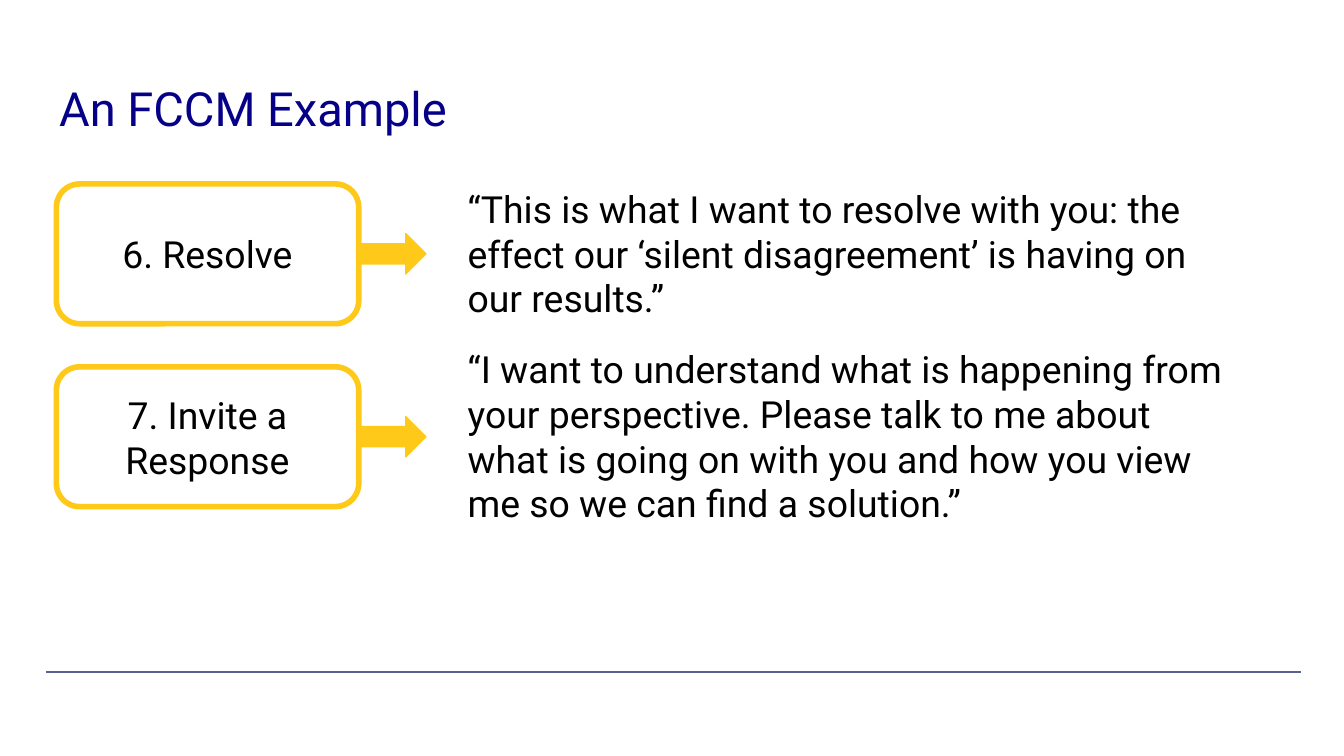
from pptx import Presentation
from pptx.dml.color import RGBColor
from pptx.enum.shapes import MSO_CONNECTOR, MSO_SHAPE
from pptx.enum.text import MSO_ANCHOR, MSO_AUTO_SIZE, PP_ALIGN
from pptx.oxml.ns import qn
from pptx.util import Pt

ROUNDED, ARROW = MSO_SHAPE.ROUNDED_RECTANGLE, MSO_SHAPE.RIGHT_ARROW
STRAIGHT = MSO_CONNECTOR.STRAIGHT
TOP, MIDDLE = MSO_ANCHOR.TOP, MSO_ANCHOR.MIDDLE
LEFT, CENTER = PP_ALIGN.LEFT, PP_ALIGN.CENTER
NO_AUTOFIT = MSO_AUTO_SIZE.NONE
TITLE_ONLY = 5

COLORS = {"title": "050087", "text": "000000", "accent": "FFC919", "rule": "58628C"}
FONT = "Roboto"
INSET = 7.2

STEPS = [
    ("6. Resolve", 87.1,
     "“This is what I want to resolve with you: the effect our ‘silent disagreement’ "
     "is having on our results.”"),
    ("7. Invite a Response", 111.6,
     "“I want to understand what is happening from your perspective. Please talk to me "
     "about what is going on with you and how you view me so we can find a solution.”"),
]
FIRST_CENTER, ROW_PITCH = 136, 98
BOX_LEFT, BOX_WIDTH, BOX_HEIGHT = 30.2, 162, 74.9
ARROW_WIDTH, ARROW_HEIGHT = 36, 21.6
QUOTE_LEFT, QUOTE_WIDTH = 243.4, 421.2


def rgb(name):
    return RGBColor.from_string(COLORS[name])


def write(sp, text, size=20, color="text", align=LEFT, anchor=TOP):
    tf = sp.text_frame
    tf.word_wrap = True
    tf.auto_size = NO_AUTOFIT
    tf.vertical_anchor = anchor
    tf.margin_left = tf.margin_right = tf.margin_top = tf.margin_bottom = Pt(INSET)
    p = tf.paragraphs[0]
    p.alignment = align
    r = p.add_run()
    r.text = text
    r.font.name, r.font.size = FONT, Pt(size)
    r.font.color.rgb = rgb(color)


class SlideBuilder:
    def __init__(self, slide):
        self.slide = slide
        self.shapes = slide.shapes

    def title(self, text, x, y, w, h):
        sp = self.shapes.title
        sp.left, sp.top, sp.width, sp.height = Pt(x), Pt(y), Pt(w), Pt(h)
        write(sp, text, size=25.2, color="title")

    def rule(self, x1, x2, y):
        line = self.shapes.add_connector(STRAIGHT, Pt(x1), Pt(y), Pt(x2), Pt(y))
        line.line.color.rgb = rgb("rule")
        line.line.width = Pt(0.75)
        sp_pr = line._element.spPr
        sp_pr.append(sp_pr.makeelement(qn("a:effectLst"), {}))

    def preset(self, kind, x, center, w, h, line_width):
        """Add an accent-outlined shape centred vertically on center."""
        sp = self.shapes.add_shape(kind, Pt(x), Pt(center - h / 2), Pt(w), Pt(h))
        sp.shadow.inherit = False
        sp.line.color.rgb = rgb("accent")
        sp.line.width = Pt(line_width)
        return sp

    def step_box(self, text, center):
        sp = self.preset(ROUNDED, BOX_LEFT, center, BOX_WIDTH, BOX_HEIGHT, 3)
        sp.fill.background()
        write(sp, text, align=CENTER, anchor=MIDDLE)

    def arrow(self, center):
        sp = self.preset(ARROW, BOX_LEFT + BOX_WIDTH, center, ARROW_WIDTH, ARROW_HEIGHT, 0.75)
        sp.fill.solid()
        sp.fill.fore_color.rgb = rgb("accent")

    def quote(self, text, center, h):
        sp = self.shapes.add_textbox(Pt(QUOTE_LEFT), Pt(center - h / 2), Pt(QUOTE_WIDTH), Pt(h))
        write(sp, text)


def main():
    prs = Presentation()
    prs.slide_width, prs.slide_height = Pt(720), Pt(405)
    s = SlideBuilder(prs.slides.add_slide(prs.slide_layouts[TITLE_ONLY]))
    s.rule(24.5, 697, 360)
    s.title("An FCCM Example", 24.5, 35.3, 671, 45.4)
    for i, (step, quote_height, quote) in enumerate(STEPS):
        center = FIRST_CENTER + i * ROW_PITCH
        s.step_box(step, center)
        s.arrow(center)
        s.quote(quote, center, quote_height)
    prs.save("out.pptx")


if __name__ == "__main__":
    main()
